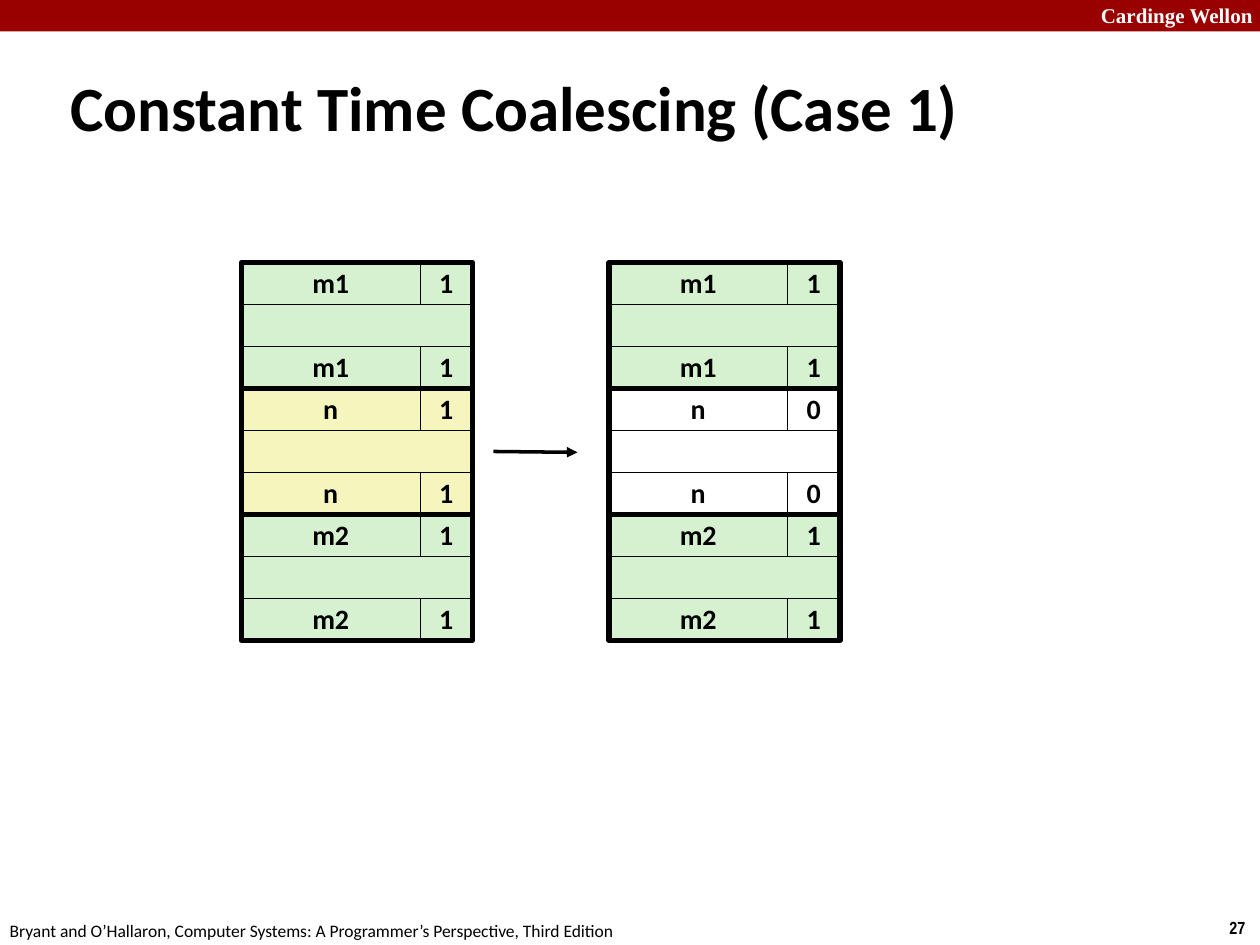
from lxml.etree import SubElement
from pptx import Presentation
from pptx.dml.color import RGBColor
from pptx.enum.shapes import MSO_CONNECTOR, MSO_SHAPE
from pptx.enum.text import MSO_ANCHOR, PP_ALIGN
from pptx.oxml.ns import qn
from pptx.util import Pt

BLACK, WHITE, RED = "000000", "FFFFFF", "990000"
GREEN, YELLOW = "D5F1CF", "F6F5BD"

ROW_HEIGHT, SIZE_WIDTH, FLAG_WIDTH = 24, 102, 30
BLOCK_WIDTH = SIZE_WIDTH + FLAG_WIDTH
BLOCK_HEIGHT = 3 * ROW_HEIGHT


def color(value):
    return RGBColor.from_string(value)


class SlideBuilder:
    """Holds the text style and the current slide."""

    def __init__(self, page, font="Calibri"):
        self.page = page
        self.font = font

    def add_text(self, frame, text, size, bold=True, ink=BLACK, font=None):
        para = frame.paragraphs[0]
        span = para.add_run()
        span.text = text
        span.font.name = font or self.font
        span.font.size = Pt(size)
        span.font.bold = bold
        span.font.color.rgb = color(ink)
        return para

    def title(self, text, left, top, width, height):
        box = self.page.shapes.title
        box.left, box.top, box.width, box.height = map(Pt, (left, top, width, height))
        box.text_frame.vertical_anchor = MSO_ANCHOR.MIDDLE
        self.add_text(box.text_frame, text, 36).alignment = PP_ALIGN.LEFT

    def label(self, text, left, top, width, height, size, **style):
        box = self.page.shapes.add_textbox(*map(Pt, (left, top, width, height)))
        box.text_frame.word_wrap = False
        self.add_text(box.text_frame, text, size, **style)

    def rect(self, left, top, width, height, fill=None, line=None, text=None):
        box = self.page.shapes.add_shape(
            MSO_SHAPE.RECTANGLE, *map(Pt, (left, top, width, height)))
        box.shadow.inherit = False
        if fill:
            box.fill.solid()
            box.fill.fore_color.rgb = color(fill)
        else:
            box.fill.background()
        if line:
            box.line.color.rgb = color(BLACK)
            box.line.width = Pt(line)
        else:
            box.line.fill.background()
        if text:
            frame = box.text_frame
            frame.word_wrap = False
            frame.vertical_anchor = MSO_ANCHOR.MIDDLE
            para = self.add_text(frame, text, 16)
            para.alignment = PP_ALIGN.CENTER
            para.line_spacing = 0.98

    def block(self, left, top, size, flag, fill):
        """Memory block: header row, payload row, footer row, heavy frame."""
        for row in (0, 2):
            y = top + row * ROW_HEIGHT
            self.rect(left, y, SIZE_WIDTH, ROW_HEIGHT, fill, 0.25, size)
            self.rect(left + SIZE_WIDTH, y, FLAG_WIDTH, ROW_HEIGHT, fill, 0.25, flag)
        self.rect(left, top + ROW_HEIGHT, BLOCK_WIDTH, ROW_HEIGHT, fill, 0.25)
        self.rect(left, top, BLOCK_WIDTH, BLOCK_HEIGHT, line=3)

    def arrow(self, x1, y1, x2, y2):
        link = self.page.shapes.add_connector(
            MSO_CONNECTOR.STRAIGHT, *map(Pt, (x1, y1, x2, y2)))
        link.line.color.rgb = color(BLACK)
        link.line.width = Pt(2)
        properties = link.element.spPr
        SubElement(properties.find(qn("a:ln")), qn("a:tailEnd"), type="triangle")
        SubElement(properties, qn("a:effectLst"))


def main():
    deck = Presentation()
    deck.slide_width, deck.slide_height = Pt(720), Pt(540)
    builder = SlideBuilder(deck.slides.add_slide(deck.slide_layouts[5]))

    # Header band, footer and page number
    builder.rect(0, 0, 720, 18, RED)
    builder.label("Cardinge Wellon", 622, -2, 103, 22, 12,
                  ink=WHITE, font="Times New Roman")
    builder.label("27", 695.5, 520.5, 24.5, 19.5, 10, font="Arial Narrow")
    builder.label("Bryant and O’Hallaron, Computer Systems: "
                  "A Programmer’s Perspective, Third Edition",
                  -1.5, 522, 366, 19.5, 10, bold=False)

    builder.title("Constant Time Coalescing (Case 1)", 33, 38, 654, 45)

    # Heap before and after freeing the middle block
    for left, flag, fill in ((138, "1", YELLOW), (348, "0", WHITE)):
        blocks = (("m1", "1", GREEN), ("n", flag, fill), ("m2", "1", GREEN))
        for index, block in enumerate(blocks):
            builder.block(left, 150 + index * BLOCK_HEIGHT, *block)
    builder.arrow(282, 258, 330, 258.5)

    deck.save("out.pptx")


if __name__ == "__main__":
    main()
